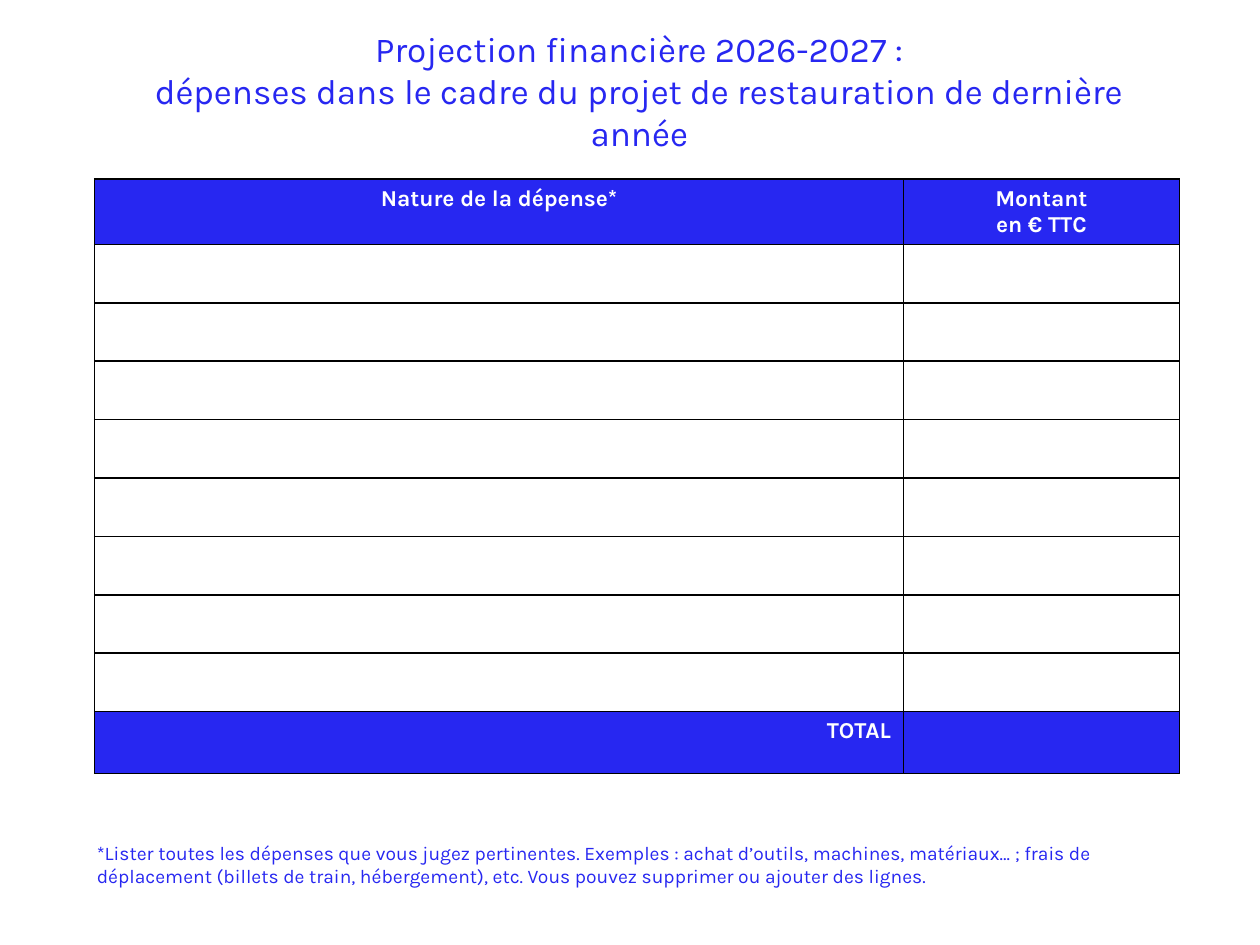
"""Build the slide with the expense table of a restoration project."""
from lxml import etree
from pptx import Presentation
from pptx.dml.color import RGBColor
from pptx.enum.text import MSO_ANCHOR, MSO_AUTO_SIZE, PP_ALIGN
from pptx.oxml.ns import qn
from pptx.util import Inches, Pt

CENTER, LEFT, RIGHT = PP_ALIGN.CENTER, PP_ALIGN.LEFT, PP_ALIGN.RIGHT
TOP = MSO_ANCHOR.TOP
NO_AUTOFIT = MSO_AUTO_SIZE.NONE
BLUE, WHITE, BLACK = "2727F1", "FFFFFF", "000000"
TITLE_ONLY = 5


def write(text_frame, lines, size, color, alignment, bold=False):
    for index, line in enumerate(lines):
        paragraph = text_frame.paragraphs[0] if index == 0 else text_frame.add_paragraph()
        paragraph.alignment = alignment
        run = paragraph.add_run()
        run.text = line
        run.font.name = "Karla"
        run.font.size = Pt(size)
        run.font.bold = bold
        run.font.color.rgb = RGBColor.from_string(color)


def style_cell(cell, fill):
    properties = cell._tc.get_or_add_tcPr()
    for side in ("a:lnL", "a:lnR", "a:lnT", "a:lnB"):
        line = etree.SubElement(properties, qn(side), w=str(Pt(1)))
        solid = etree.SubElement(line, qn("a:solidFill"))
        etree.SubElement(solid, qn("a:srgbClr"), val=BLACK)
    cell.fill.solid()
    cell.fill.fore_color.rgb = RGBColor.from_string(fill)


presentation = Presentation()
presentation.slide_width = Inches(10)
presentation.slide_height = Inches(7.5)
slide = presentation.slides.add_slide(presentation.slide_layouts[TITLE_ONLY])

title = slide.shapes.title
title.left, title.top = Inches(0.77), Inches(0.17)
title.width, title.height = Inches(8.61), Inches(1.1)
title.text_frame.word_wrap = True
title.text_frame.auto_size = NO_AUTOFIT
title.text_frame.vertical_anchor = TOP
write(title.text_frame, [
    "Projection financière 2026-2027 :",
    "dépenses dans le cadre du projet de restauration de dernière année",
], 20, BLUE, CENTER)

expense_rows = 8
last_row = expense_rows + 1
table_height, header_height, total_height = 4.72, 0.52, 0.49
expense_height = (table_height - header_height - total_height) / expense_rows
table = slide.shapes.add_table(
    expense_rows + 2, 2, Inches(0.75), Inches(1.42), Inches(8.61), Inches(table_height)
).table
table.columns[0].width = Inches(6.42)
table.columns[1].width = Inches(2.19)

row_heights = [header_height] + [expense_height] * expense_rows + [total_height]
for row_index, height in enumerate(row_heights):
    table.rows[row_index].height = Inches(height)
    for cell in table.rows[row_index].cells:
        style_cell(cell, BLUE if row_index in (0, last_row) else WHITE)

for row_index, column_index, lines, alignment in (
    (0, 0, ["Nature de la dépense*"], CENTER),
    (0, 1, ["Montant", "en € TTC"], CENTER),
    (last_row, 0, ["TOTAL"], RIGHT),
):
    cell = table.cell(row_index, column_index)
    write(cell.text_frame, lines, 13, WHITE, alignment, bold=True)

footnote = slide.shapes.add_textbox(Inches(0.67), Inches(6.63), Inches(8.8), Inches(0.47))
footnote.text_frame.word_wrap = True
write(footnote.text_frame, [
    "*Lister toutes les dépenses que vous jugez pertinentes. Exemples : achat d’outils, "
    "machines, matériaux… ; frais de déplacement (billets de train, hébergement), etc. "
    "Vous pouvez supprimer ou ajouter des lignes."
], 11, BLUE, LEFT)

presentation.save("out.pptx")
